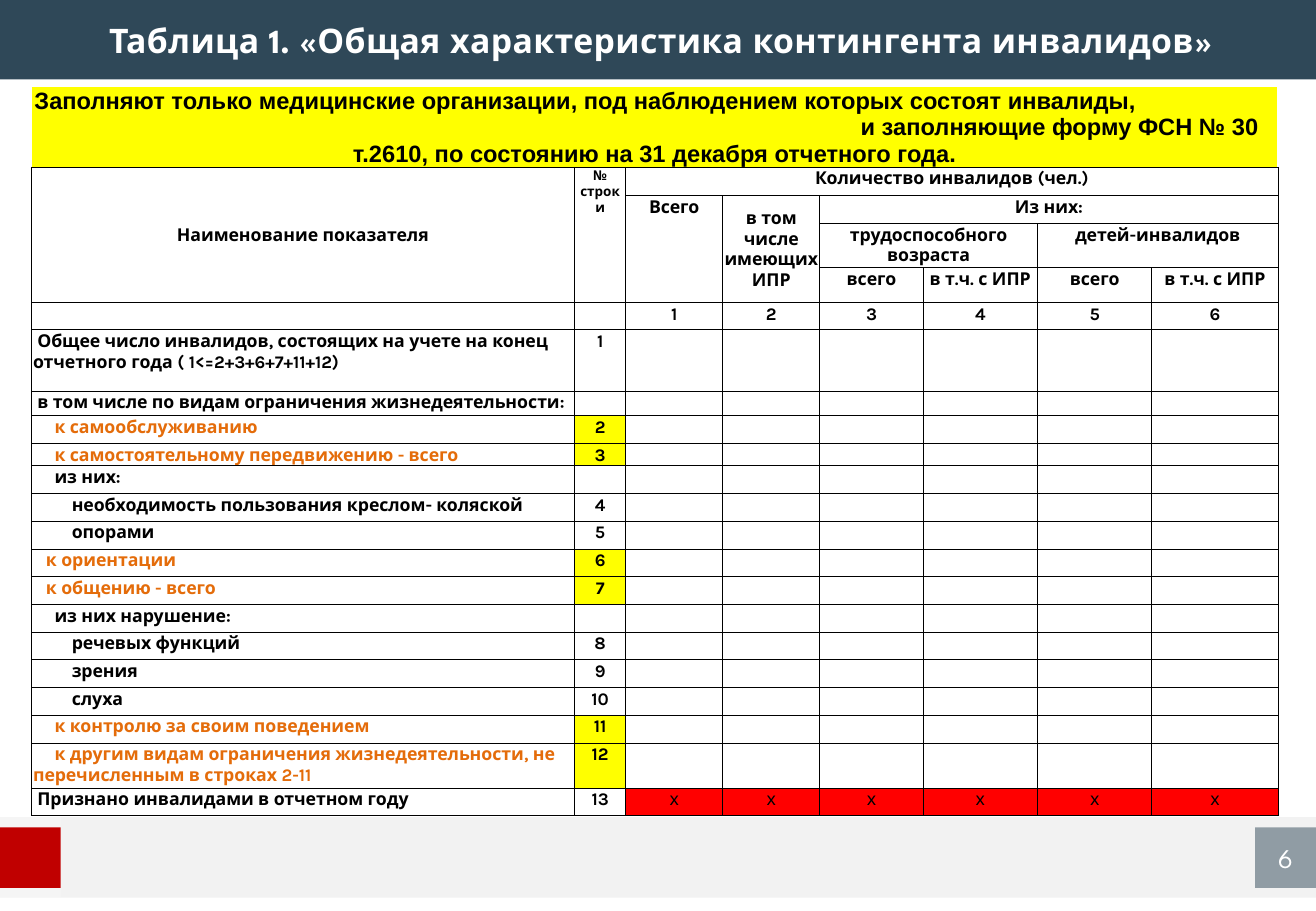
"""Build a slide with the summary table on the disabled population."""
from typing import NamedTuple, Optional

from lxml import etree
from pptx import Presentation
from pptx.dml.color import RGBColor
from pptx.enum.shapes import MSO_SHAPE
from pptx.enum.text import MSO_ANCHOR, PP_ALIGN
from pptx.oxml.ns import qn
from pptx.util import Cm, Pt

LEFT, CENTER = PP_ALIGN.LEFT, PP_ALIGN.CENTER
TOP, MIDDLE = MSO_ANCHOR.TOP, MSO_ANCHOR.MIDDLE
RECTANGLE = MSO_SHAPE.RECTANGLE
BLACK, WHITE, YELLOW, RED, ORANGE = "000000", "FFFFFF", "FFFF00", "FF0000", "E46C0A"
NAVY = "2F4858"
HEADING_FONT, TABLE_FONT = "League Spartan", "Karla"
SLIDE_WIDTH, SLIDE_HEIGHT = 27.51, 19.05
SPACE_WIDTH = 0.09
COLUMN_WIDTHS = (11.35, 1.07, 2.03, 2.03, 2.16, 2.39, 2.39, 2.64)
HEADER_HEIGHTS = (1.67, 0.59, 0.59, 0.92, 0.73, 0.57)


class Bar(NamedTuple):
    """A plain rectangle of the slide frame, in centimetres."""

    left: float
    top: float
    width: float
    height: float
    color: str
    opacity: int = 100
    text: str = ""


class Header(NamedTuple):
    """A heading cell with the rows and columns it spans."""

    row: int
    column: int
    text: str
    rows: int = 1
    columns: int = 1
    anchor: MSO_ANCHOR = TOP
    size: float = 10.5


class Indicator(NamedTuple):
    """A table line: its label, number, indent in spaces and height."""

    label: str
    number: str = ""
    indent: int = 1
    height: float = 0.58
    highlighted: bool = False


class BannerLine(NamedTuple):
    """A line of the yellow banner with its left indent."""

    text: str
    alignment: PP_ALIGN = LEFT
    indent: float = 0


BARS = (
    Bar(0, 17.09, SLIDE_WIDTH, 1.68, "F2F2F2"),
    Bar(0, 0, SLIDE_WIDTH, 1.66, NAVY),
    Bar(0, 17.09, 1.27, 1.68, WHITE, 30),
    Bar(0, 17.3, 1.27, 1.27, "C00000"),
    Bar(26.24, 17.3, 1.27, 1.27, NAVY, 50, "6"),
)
BANNER = (
    BannerLine("Заполняют только медицинские организации, под наблюдением которых состоят инвалиды,", indent=0.03),
    BannerLine("и заполняющие форму ФСН № 30", indent=17.3),
    BannerLine("т.2610, по состоянию на 31 декабря отчетного года.", CENTER),
)
HEADERS = (
    Header(1, 0, "Наименование показателя", rows=4, anchor=MIDDLE),
    Header(1, 1, "№ строки", rows=4, size=8),
    Header(1, 2, "Количество инвалидов (чел.)", columns=6),
    Header(2, 2, "Всего", rows=3),
    Header(2, 3, "в том числе имеющих ИПР", rows=3, anchor=MIDDLE),
    Header(2, 4, "Из них:", columns=4),
    Header(3, 4, "трудоспособного возраста", columns=2),
    Header(3, 6, "детей-инвалидов", columns=2),
    *(Header(4, 4 + index, ("всего", "в т.ч. с ИПР")[index % 2]) for index in range(4)),
    *(Header(5, 1 + number, str(number)) for number in range(1, 7)),
)
INDICATORS = (
    Indicator("Общее число инвалидов, состоящих на учете на конец отчетного года ( 1<=2+3+6+7+11+12)", "1", height=1.28),
    Indicator("в том числе по видам ограничения жизнедеятельности:", height=0.52),
    Indicator("к самообслуживанию", "2", 5, highlighted=True),
    Indicator("к самостоятельному передвижению - всего", "3", 5, 0.44, True),
    Indicator("из них:", indent=5),
    Indicator("необходимость пользования креслом- коляской", "4", 9),
    Indicator("опорами", "5", 9),
    Indicator("к ориентации", "6", 3, highlighted=True),
    Indicator("к общению - всего", "7", 3, highlighted=True),
    Indicator("из них нарушение:", indent=5),
    Indicator("речевых функций", "8", 9),
    Indicator("зрения", "9", 9),
    Indicator("слуха", "10", 9),
    Indicator("к контролю за своим поведением", "11", 5, highlighted=True),
    Indicator("к другим видам ограничения жизнедеятельности, не перечисленным в строках 2-11", "12", 5, 0.94, True),
    Indicator("Признано инвалидами в отчетном году", "13"),
)


def rgb(color: str) -> RGBColor:
    """Turn a hex string into a colour."""
    return RGBColor.from_string(color)


def write(paragraph, text: str, size: float, font: str = TABLE_FONT, color: str = BLACK,
          alignment: PP_ALIGN = CENTER, bold: bool = True):
    """Add one formatted run to a paragraph and return the run."""
    paragraph.alignment = alignment
    run = paragraph.add_run()
    run.text = text
    run.font.size, run.font.name, run.font.bold = Pt(size), font, bold
    run.font.color.rgb = rgb(color)
    return run


def indent(paragraph, left: float = 0, first_line: float = 0) -> None:
    """Set the left and first-line indents of a paragraph."""
    properties = paragraph._p.get_or_add_pPr()
    properties.set("marL", str(Cm(left)))
    properties.set("indent", str(Cm(first_line)))


def draw_bar(slide, bar: Bar) -> None:
    """Draw one rectangle of the slide frame."""
    shape = slide.shapes.add_shape(RECTANGLE, Cm(bar.left), Cm(bar.top), Cm(bar.width), Cm(bar.height))
    shape.shadow.inherit = False
    shape.line.fill.background()
    shape.fill.solid()
    shape.fill.fore_color.rgb = rgb(bar.color)
    if bar.opacity < 100:
        color = shape._element.spPr.find(".//" + qn("a:srgbClr"))
        etree.SubElement(color, qn("a:alpha")).set("val", str(bar.opacity * 1000))
    if bar.text:
        shape.text_frame.vertical_anchor = MIDDLE
        write(shape.text_frame.paragraphs[0], bar.text, 16, HEADING_FONT, WHITE, bold=False)


def draw_title(slide, text: str) -> None:
    """Place the title placeholder over the top bar."""
    title = slide.shapes.title
    title.left, title.top, title.width, title.height = Cm(1.65), Cm(0), Cm(24.31), Cm(1.66)
    title._element.getparent().append(title._element)
    frame = title.text_frame
    frame.margin_left = frame.margin_right = frame.margin_top = frame.margin_bottom = 0
    frame.vertical_anchor = MIDDLE
    run = write(frame.paragraphs[0], text, 20, HEADING_FONT, WHITE)
    run.font._element.set("spc", "20")


def format_cell(cell, sides: str) -> None:
    """Give a cell its margins, thin borders, no fill and a small empty line."""
    cell.margin_left = cell.margin_right = cell.margin_top = Cm(0.03)
    cell.margin_bottom = 0
    properties = cell._tc.get_or_add_tcPr()
    for side in sides:
        line = etree.SubElement(properties, qn(f"a:ln{side}"), w=str(Pt(0.5)))
        fill = etree.SubElement(line, qn("a:solidFill"))
        etree.SubElement(fill, qn("a:srgbClr"), val=BLACK)
    cell.fill.background()
    etree.SubElement(cell.text_frame.paragraphs[0]._p, qn("a:endParaRPr"), sz="800")


def fill_cell(cell, text: str, fill: Optional[str] = None, size: float = 10.5, color: str = BLACK,
              alignment: PP_ALIGN = CENTER, bold: bool = True) -> None:
    """Write a text into a cell and colour its background."""
    if text:
        write(cell.text_frame.paragraphs[0], text, size, color=color, alignment=alignment, bold=bold)
    if fill:
        cell.fill.solid()
        cell.fill.fore_color.rgb = rgb(fill)


def draw_table(slide) -> None:
    """Draw the banner, the headings and the indicator rows."""
    heights = HEADER_HEIGHTS + tuple(indicator.height for indicator in INDICATORS)
    table = slide.shapes.add_table(len(heights), len(COLUMN_WIDTHS), Cm(0.66), Cm(1.8),
                                   Cm(sum(COLUMN_WIDTHS)), Cm(sum(heights))).table
    table.first_row = table.horz_banding = False
    for column, width in zip(table.columns, COLUMN_WIDTHS):
        column.width = Cm(width)
    for index, (row, height) in enumerate(zip(table.rows, heights)):
        row.height = Cm(height)
        for cell in row.cells:
            format_cell(cell, "LRTB" if index else "B")

    banner = table.cell(0, 0)
    banner.merge(table.cell(0, len(COLUMN_WIDTHS) - 1))
    banner.vertical_anchor = MIDDLE
    fill_cell(banner, "", YELLOW)
    for index, line in enumerate(BANNER):
        paragraph = banner.text_frame.add_paragraph() if index else banner.text_frame.paragraphs[0]
        indent(paragraph, left=line.indent)
        write(paragraph, line.text, 14, "Arial", alignment=line.alignment)

    for header in HEADERS:
        cell = table.cell(header.row, header.column)
        if header.rows * header.columns > 1:
            cell.merge(table.cell(header.row + header.rows - 1, header.column + header.columns - 1))
        cell.vertical_anchor = header.anchor
        fill_cell(cell, header.text, size=header.size)

    for row, indicator in enumerate(INDICATORS, len(HEADER_HEIGHTS)):
        label = table.cell(row, 0)
        indent(label.text_frame.paragraphs[0], first_line=indicator.indent * SPACE_WIDTH)
        fill_cell(label, indicator.label, color=ORANGE if indicator.highlighted else BLACK, alignment=LEFT)
        fill_cell(table.cell(row, 1), indicator.number, YELLOW if indicator.highlighted else None)
    for column in range(2, len(COLUMN_WIDTHS)):
        fill_cell(table.cell(len(heights) - 1, column), "х", RED, bold=False)


def main() -> None:
    """Build and save the presentation."""
    presentation = Presentation()
    presentation.slide_width, presentation.slide_height = Cm(SLIDE_WIDTH), Cm(SLIDE_HEIGHT)
    slide = presentation.slides.add_slide(presentation.slide_layouts[5])
    for bar in BARS:
        draw_bar(slide, bar)
    draw_title(slide, "Таблица 1. «Общая характеристика контингента инвалидов»")
    draw_table(slide)
    presentation.save("out.pptx")


if __name__ == "__main__":
    main()
